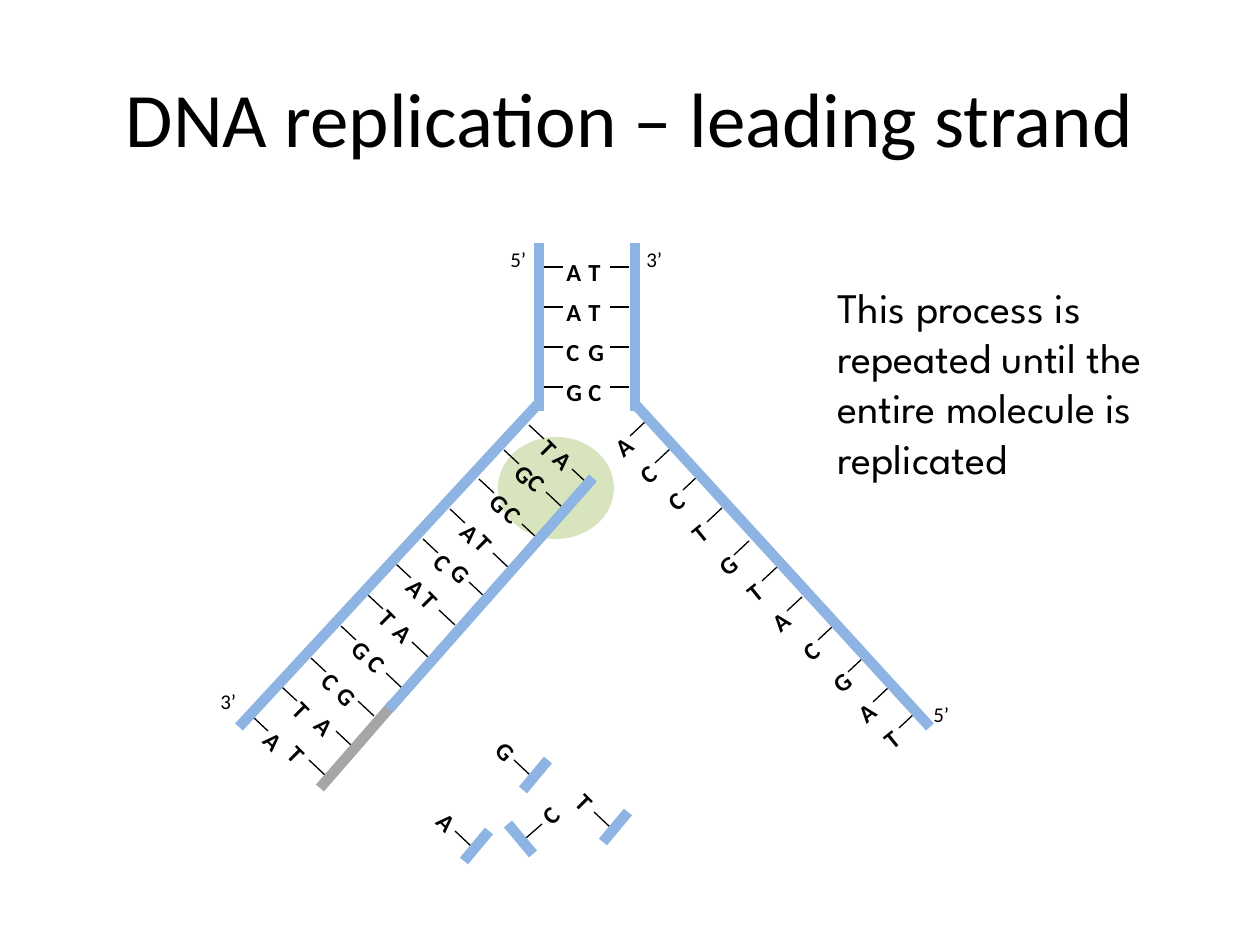
from collections import namedtuple
from dataclasses import dataclass

from lxml import etree
from pptx import Presentation
from pptx.dml.color import RGBColor
from pptx.enum.shapes import MSO_CONNECTOR, MSO_SHAPE
from pptx.enum.text import MSO_ANCHOR, PP_ALIGN
from pptx.oxml.ns import qn
from pptx.util import Pt

STRAIGHT = MSO_CONNECTOR.STRAIGHT
OVAL = MSO_SHAPE.OVAL
MIDDLE = MSO_ANCHOR.MIDDLE
CENTER = PP_ALIGN.CENTER
EMU_PER_PX = 914400 / 126

Box = namedtuple("Box", "x y w h")
Base = namedtuple("Base", "rotation rung backbone", defaults=[None])


@dataclass(frozen=True)
class Theme:
    ink: RGBColor = RGBColor(0, 0, 0)
    strand: RGBColor = RGBColor(0x8E, 0xB4, 0xE3)
    primer: RGBColor = RGBColor(0xA6, 0xA6, 0xA6)
    polymerase: RGBColor = RGBColor(0xD7, 0xE4, 0xBD)
    font: str = "Calibri"
    caption_font: str = "League Spartan"
    title_size: int = 44
    caption_size: int = 24
    base_size: int = 14
    end_size: int = 12
    rung_width: float = 0.75
    strand_width: float = 6


THEME = Theme()

STEM_LEFT = Base(0, (-11, 21, 9, 21))
STEM_RIGHT = Base(0, (53, 21, 34, 21))
OUTER = Base(45, (-5, 0, 10, 14))
INNER = Base(45, (40, 48, 24, 33))
PRIMER = Base(45, (43, 44, 27, 29))
RIGHT = Base(321, (45, 0, 30, 14))
FREE = Base(45, (40, 48, 24, 33), (58, 33, 33, 63))
FREE_MIRRORED = Base(315, (-1, 47, 15, 33), (-19, 33, 6, 63))

STEM_PAIRS = ["AT", "AT", "CG", "GC"]
OUTER_BASES = [
    ("T", 295, 21), ("G", 270, 46), ("G", 245, 75), ("A", 216, 105),
    ("C", 189, 135), ("A", 162, 160), ("T", 134, 191), ("G", 107, 222),
    ("C", 77, 254), ("T", 48, 283), ("A", 19, 313),
]
INNER_BASES = [
    ("A", 309, 32), ("C", 283, 55), ("C", 259, 87), ("T", 230, 116),
    ("G", 206, 145), ("T", 176, 173), ("A", 149, 205), ("C", 123, 236),
]
PRIMER_BASES = [("G", 92, 268), ("A", 70, 298), ("T", 43, 327)]
RIGHT_BASES = [
    ("A", -35, 18), ("C", -10, 45), ("C", 18, 72), ("T", 42, 104),
    ("G", 69, 137), ("T", 97, 163), ("A", 122, 193), ("C", 153, 222),
    ("G", 183, 254), ("A", 208, 284), ("T", 234, 310),
]
FREE_BASES = [("G", 59, 0), ("A", 0, 71), ("T", 139, 52)]


def px(*lengths):
    return [round(n * EMU_PER_PX) for n in lengths]


def format_run(p, size, font=THEME.font, bold=False):
    f = p.runs[0].font
    f.size, f.name, f.bold = Pt(size), font, bold
    f.color.rgb = THEME.ink


def add_line(s, box, ends, color, width):
    x1, y1, x2, y2 = ends
    c = s.shapes.add_connector(
        STRAIGHT, *px(box.x + x1, box.y + y1, box.x + x2, box.y + y2))
    c.line.color.rgb = color
    c.line.width = Pt(width)
    etree.SubElement(c._element.spPr, qn("a:effectLst"))


def add_strand(s, box, ends, color=THEME.strand):
    add_line(s, box, ends, color, THEME.strand_width)


def add_text(s, box, text, size, font=THEME.font, bold=False):
    sp = s.shapes.add_textbox(*px(*box))
    tf = sp.text_frame
    tf.word_wrap = True
    tf.text = text
    format_run(tf.paragraphs[0], size, font, bold)
    return sp


def add_label(s, box, text, x, y, width, size, bold=False):
    sp = add_text(s, Box(box.x + x, box.y + y, width, 39), text, size, bold=bold)
    p = sp.text_frame.paragraphs[0]
    p.line_spacing = 1.15
    p.space_after = Pt(10)
    return sp


def add_end(s, box, text, x, y):
    add_label(s, box, text, x, y, 48, THEME.end_size)


def add_bases(s, box, bases, kind):
    for letter, x, y in bases:
        origin = Box(box.x + x, box.y + y, 39, 39)
        add_line(s, origin, kind.rung, THEME.ink, THEME.rung_width)
        if kind.backbone:
            add_strand(s, origin, kind.backbone)
        sp = add_label(s, origin, letter, 0, 0, 39, THEME.base_size, True)
        sp.rotation = kind.rotation


def add_title(s, box):
    sp = s.shapes.title
    sp.left, sp.top, sp.width, sp.height = px(*box)
    tf = sp.text_frame
    tf.text = "DNA replication – leading strand"
    tf.vertical_anchor = MIDDLE
    tf.paragraphs[0].alignment = CENTER
    format_run(tf.paragraphs[0], THEME.title_size)


def add_stem(s, box):
    for i, (left, right) in enumerate(STEM_PAIRS):
        y = 3 + 40 * i
        add_bases(s, box, [(left, 15, y)], STEM_LEFT)
        add_bases(s, box, [(right, 37, y)], STEM_RIGHT)
    for x in (0, box.w):
        add_strand(s, box, (x, 0, x, box.h))
    add_end(s, box, "5’", -41, -6)
    add_end(s, box, "3’", box.w - 1, -6)


def add_leading_arm(s, box):
    sp = s.shapes.add_shape(OVAL, *px(box.x + 259, box.y + 33, 116, 102))
    sp.shadow.inherit = False
    sp.fill.solid()
    sp.fill.fore_color.rgb = THEME.polymerase
    sp.line.fill.background()
    add_bases(s, box, OUTER_BASES, OUTER)
    add_strand(s, box, (box.w, 0, 0, box.h))
    add_bases(s, box, INNER_BASES, INNER)
    add_bases(s, box, PRIMER_BASES, PRIMER)
    add_strand(s, box, (154, 300, 81, 384), THEME.primer)
    add_strand(s, box, (354, 74, 150, 305))
    add_end(s, box, "3’", -31, 275)


def add_lagging_arm(s, box):
    add_bases(s, box, RIGHT_BASES, RIGHT)
    add_strand(s, box, (0, 0, box.w, box.h))
    add_end(s, box, "5’", 286, 288)


def add_free_nucleotides(s, box):
    add_bases(s, box, FREE_BASES, FREE)
    add_bases(s, box, [("C", 96, 64)], FREE_MIRRORED)


def add_caption(s, box):
    add_text(s, box, "This process is repeated until the entire molecule is replicated",
             THEME.caption_size, THEME.caption_font)


def main():
    prs = Presentation()
    prs.slide_width, prs.slide_height = px(1260, 945)
    s = prs.slides.add_slide(prs.slide_layouts[5])
    add_title(s, Box(63, 38, 1134, 158))
    add_leading_arm(s, Box(239, 404, 299, 323))
    add_lagging_arm(s, Box(635, 404, 295, 323))
    add_stem(s, Box(539, 243, 96, 168))
    add_free_nucleotides(s, Box(431, 727, 197, 134))
    add_caption(s, Box(825, 275, 415, 217))
    prs.save("out.pptx")


if __name__ == "__main__":
    main()
